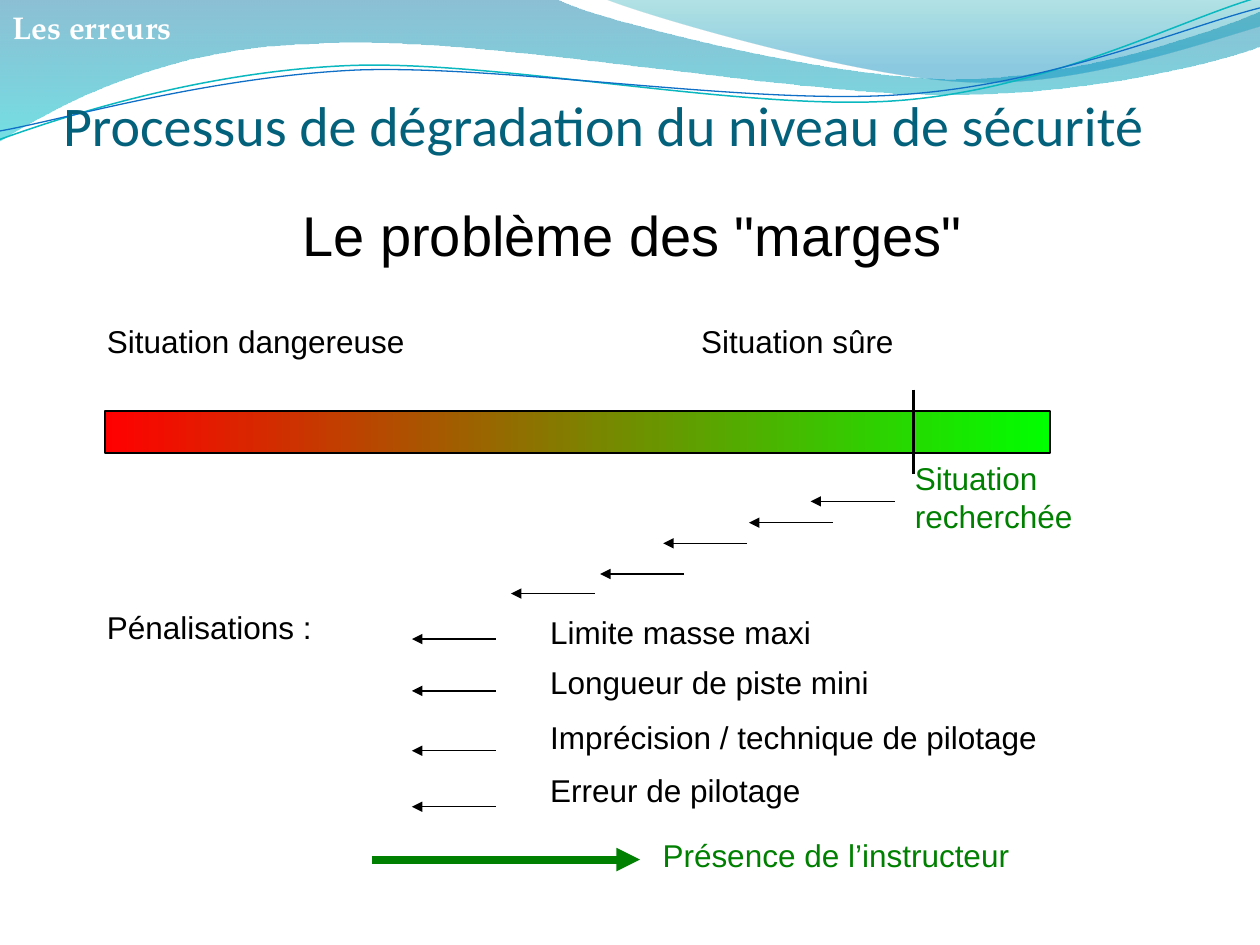
"""Build the slide on safety margins and how they erode."""
from lxml.etree import SubElement
from pptx import Presentation
from pptx.dml.color import RGBColor
from pptx.enum.shapes import MSO_CONNECTOR, MSO_SHAPE
from pptx.enum.text import MSO_ANCHOR, PP_ALIGN
from pptx.oxml.ns import qn
from pptx.util import Pt

BLACK = RGBColor(0x00, 0x00, 0x00)
WHITE = RGBColor(0xFF, 0xFF, 0xFF)
GREEN = RGBColor(0x00, 0x80, 0x00)
DANGER = RGBColor(0xFF, 0x00, 0x00)
SAFE = RGBColor(0x00, 0xFF, 0x00)
TITLE_BLUE = RGBColor(0x04, 0x61, 0x7B)
DEEP_BLUE = RGBColor(0x00, 0x74, 0xA1)
CYAN = RGBColor(0x00, 0xC6, 0xCF)
TEAL = RGBColor(0x00, 0xA1, 0xA9)
SKY = RGBColor(0x00, 0x8B, 0xBF)
AQUA = RGBColor(0x0A, 0xB8, 0xBF)
ROYAL = RGBColor(0x0F, 0x6F, 0xC6)

TITLE = "Processus de dégradation du niveau de sécurité"
SCALE_ENDS, SAFE_TAB = "Situation dangereuse\tSituation sûre", 339.5
LABELS = [
    ("Situation\nrecherchée", 515.7, 258.7, 134.5, GREEN),
    ("Pénalisations :", 54, 343.8, 170.5, BLACK),
    ("Présence de l’instructeur", 371.5, 474.2, 278.5, GREEN),
]
PENALTIES = [
    ("Limite masse maxi", 347, 213, 365.2),
    ("Longueur de piste mini", 375.6, 258, 394.8),
    ("Imprécision / technique de pilotage", 407, 386, 429),
    ("Erreur de pilotage", 437, 205, 461),
]
EROSION_TIPS = [(463.2, 286.5), (428, 298.7), (379, 310.5), (343, 328), (292, 339.2)]
PENALTY_TIP, PENALTY_LEFT, ARROW_LENGTH = 235.4, 307.3, 48

WAVES = [
    ((0, 0), [(317, -1), (343, 12, 478, 45, 546, 45), (614, 45, 690, 19, 720, 6.5),
              (721, 26), (708, 32, 626, 55, 537, 54), (448, 54, 275, 20, 185, 24.5),
              (93, 26, 33, 60, -1, 81)],
     [(0, DEEP_BLUE, 45), (1, CYAN, 55)]),
    ((345, -1), [(366, 8, 491, 45, 554, 47), (616, 50, 692, 23, 720, 15), (720, 0)],
     [(0, TEAL, 30), (0.8, SKY, 45)]),
]
RIPPLES = [
    ((-1, 80), [(35, 67, 114, 41, 199, 37.5), (284, 34, 427, 64, 513, 57.5),
                (600, 51, 675, 11, 719, -1.5)], AQUA, 0.85),
    ((-1, 75), [(34, 69, 118, 44, 204, 40), (290, 37, 430, 60.5, 516, 54),
                (602, 48, 678, 15, 720, 4.5)], ROYAL, 0.75),
]


def add_outline(shapes, start, segments, close):
    builder = shapes.build_freeform(Pt(start[0]), Pt(start[1]))
    builder.add_line_segments([(Pt(s[-2]), Pt(s[-1])) for s in segments], close=close)
    outline = builder.convert_to_shape()
    outline.shadow.inherit = False
    sides = list(outline._element.iter(qn("a:lnTo")))
    for side, segment in zip(sides, segments):
        if len(segment) == 6:
            side.tag = qn("a:cubicBezTo")
            side.remove(side[0])
            for x, y in zip(segment[::2], segment[1::2]):
                SubElement(side, qn("a:pt"), x=str(Pt(x) - outline.left),
                           y=str(Pt(y) - outline.top))
    return outline


def fill_gradient(shape, stops, angle):
    shape.fill.gradient()
    shape.fill.gradient_angle = angle
    for stop, (position, color, _) in zip(shape.fill.gradient_stops, stops):
        stop.position = position
        stop.color.rgb = color
    fill_colors = shape._element.spPr.find(qn("a:gradFill")).iter(qn("a:srgbClr"))
    for fill_color, (_, _, opacity) in zip(fill_colors, stops):
        if opacity < 100:
            SubElement(fill_color, qn("a:alpha"), val=str(opacity * 1000))


def format_text(frame, size, font, color, bold=False, align=PP_ALIGN.LEFT):
    for paragraph in frame.paragraphs:
        paragraph.alignment = align
        for run in paragraph.runs:
            run.font.size = Pt(size)
            run.font.name = font
            run.font.bold = bold
            run.font.color.rgb = color


def add_label(shapes, text, left, top, width, color=BLACK, size=18, font="Arial",
              leading=1.6, **style):
    height = size * leading * len(text.split("\n")) + 7.2
    frame = shapes.add_textbox(Pt(left), Pt(top), Pt(width), Pt(height)).text_frame
    frame.word_wrap = True
    frame.text = text
    format_text(frame, size, font, color, **style)
    return frame


def add_line(shapes, x1, y1, x2, y2, color=BLACK, width=0.75, arrow=True):
    line = shapes.add_connector(MSO_CONNECTOR.STRAIGHT, Pt(x1), Pt(y1), Pt(x2), Pt(y2))
    line.line.color.rgb = color
    line.line.width = Pt(width)
    if arrow:
        SubElement(line.line._get_or_add_ln(), qn("a:tailEnd"), type="triangle")
    SubElement(line._element.spPr, qn("a:effectLst"))


def main():
    deck = Presentation()
    deck.slide_width, deck.slide_height = Pt(720), Pt(540)
    slide = deck.slides.add_slide(deck.slide_layouts[5])
    shapes = slide.shapes

    for start, segments, stops in WAVES:
        wave = add_outline(shapes, start, segments, True)
        fill_gradient(wave, stops, 270)
        wave.line.fill.background()
    for start, segments, color, width in RIPPLES:
        ripple = add_outline(shapes, start, segments, False)
        ripple.fill.background()
        ripple.line.color.rgb = color
        ripple.line.width = Pt(width)

    title = shapes.title
    title.left, title.top, title.width, title.height = Pt(36), Pt(0), Pt(648), Pt(90)
    frame = title.text_frame
    frame.text = TITLE
    frame.word_wrap = True
    frame.vertical_anchor = MSO_ANCHOR.BOTTOM
    frame.margin_left = frame.margin_right = frame.margin_bottom = Pt(0)
    frame.margin_top = Pt(3.6)
    format_text(frame, 32, "Calibri", TITLE_BLUE)
    shapes._spTree.append(title._element)

    add_label(shapes, "Les erreurs", 0, 0.9, 109.5, WHITE, font="TeX Gyre Pagella",
              leading=1.2, bold=True)
    add_label(shapes, 'Le problème des "marges"', 19.7, 111, 683.3, size=32,
              leading=1.2, align=PP_ALIGN.CENTER)

    scale_ends = add_label(shapes, SCALE_ENDS, 54, 180.6, 613.5)
    tabs = SubElement(scale_ends.paragraphs[0]._p.get_or_add_pPr(), qn("a:tabLst"))
    SubElement(tabs, qn("a:tab"), pos=str(Pt(SAFE_TAB)), algn="l")

    safety_scale = shapes.add_shape(MSO_SHAPE.RECTANGLE, Pt(60), Pt(234.7), Pt(540), Pt(24.3))
    safety_scale.shadow.inherit = False
    fill_gradient(safety_scale, [(0, DANGER, 100), (1, SAFE, 100)], 0)
    safety_scale.line.color.rgb = BLACK
    safety_scale.line.width = Pt(1)
    add_line(shapes, 522, 222.7, 522, 270.7, width=2.25, arrow=False)

    for label in LABELS:
        add_label(shapes, *label)
    for penalty, top, width, _ in PENALTIES:
        add_label(shapes, penalty, PENALTY_LEFT, top, width)
    penalty_tips = [(PENALTY_TIP, y) for *_, y in PENALTIES]
    for x, y in EROSION_TIPS + penalty_tips:
        add_line(shapes, x + ARROW_LENGTH, y, x, y)
    add_line(shapes, 212.5, 491.2, 365.7, 491.2, GREEN, 4.5)

    deck.save("out.pptx")


if __name__ == "__main__":
    main()
